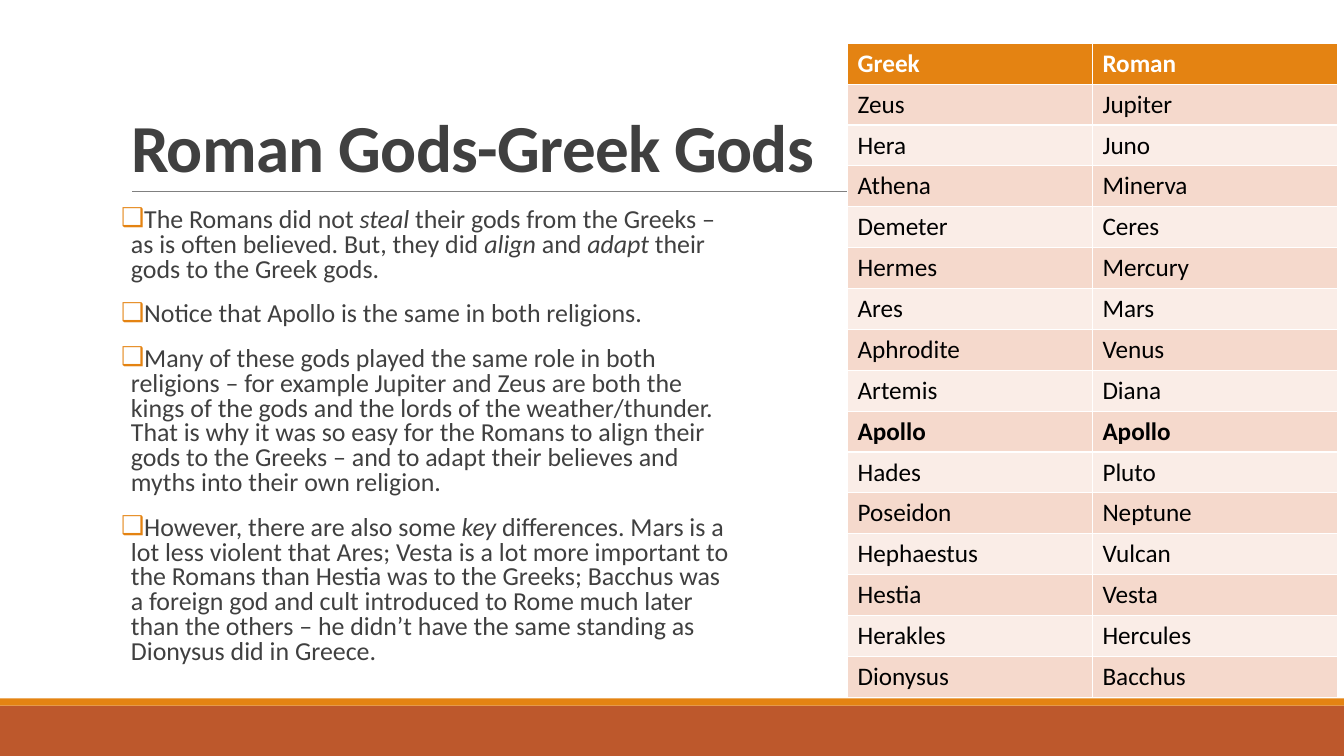
"""Build a slide that compares the Greek and the Roman gods."""
from lxml.etree import SubElement as Sub
from pptx import Presentation
from pptx.dml.color import RGBColor as RGB
from pptx.enum.shapes import MSO_CONNECTOR as Link, MSO_SHAPE as Shape
from pptx.enum.text import MSO_ANCHOR as Anchor, MSO_AUTO_SIZE as Fit, PP_ALIGN as Align
from pptx.oxml.ns import qn
from pptx.util import Cm, Pt

ORANGE, RUST, GREY = "E48312", "BD582C", "404040"


def paint(fill, color):
    fill.solid()
    fill.fore_color.rgb = RGB.from_string(color)


def style(font, size, color, bold=False):
    font.name, font.size, font.bold = "Calibri", Pt(size), bold
    font.color.rgb = RGB.from_string(color)


deck = Presentation()
deck.slide_width, deck.slide_height = Cm(33.87), Cm(19.05)
slide = deck.slides.add_slide(deck.slide_layouts[1])
shapes = slide.shapes
title, body = slide.placeholders

for top, high, color in [(17.78, 1.27, RUST), (17.6, 0.18, ORANGE)]:
    bar = shapes.add_shape(Shape.RECTANGLE, 0, Cm(top), deck.slide_width, Cm(high))
    bar.shadow.inherit = False
    paint(bar.fill, color)
    bar.line.fill.background()

rule = shapes.add_connector(Link.STRAIGHT, Cm(3.33), Cm(4.83), Cm(31.01), Cm(4.83))
rule.line.width = Pt(0.5)
paint(rule.line.fill, "808080")
Sub(rule._element.spPr, qn("a:effectLst"))

title.left, title.top, title.width, title.height = Cm(3.05), Cm(0.79), Cm(17.73), Cm(4.04)
frame = title.text_frame
frame.text = "Roman Gods-Greek Gods"
frame.auto_size, frame.vertical_anchor = Fit.NONE, Anchor.BOTTOM
head = frame.paragraphs[0]
head.alignment, head.line_spacing = Align.LEFT, 0.85
style(head.font, 48, GREY, True)
head.runs[0]._r.get_or_add_rPr().set("spc", "-50")

points = [
    "The Romans did not *steal* their gods from the Greeks – as is often believed. "
    "But, they did *align* and *adapt* their gods to the Greek gods.",
    "Notice that Apollo is the same in both religions.",
    "Many of these gods played the same role in both religions – for example Jupiter "
    "and Zeus are both the kings of the gods and the lords of the weather/thunder. "
    "That is why it was so easy for the Romans to align their gods to the Greeks – "
    "and to adapt their believes and myths into their own religion.",
    "However, there are also some *key *differences. Mars is a lot less violent that "
    "Ares; Vesta is a lot more important to the Romans than Hestia was to the Greeks; "
    "Bacchus was a foreign god and cult introduced to Rome much later than the others "
    "– he didn’t have the same standing as Dionysus did in Greece.",
]
body.left, body.top, body.width, body.height = Cm(3.05), Cm(5.13), Cm(15.37), Cm(12.34)
frame = body.text_frame
frame.auto_size, frame.vertical_anchor = Fit.NONE, Anchor.TOP
frame.margin_left = frame.margin_right = 0
for num, point in enumerate(points):
    para = frame.add_paragraph() if num else frame.paragraphs[0]
    para.line_spacing = 0.8
    para.space_before, para.space_after = Pt(12 if num else 0), Pt(2)
    prop = para._p.get_or_add_pPr()
    prop.set("marL", str(Cm(0.25)))
    prop.set("indent", str(Cm(-0.25)))
    Sub(Sub(prop, qn("a:buClr")), qn("a:srgbClr"), val=ORANGE)
    Sub(prop, qn("a:buFont"), typeface="Calibri")
    Sub(prop, qn("a:buChar"), char="❑")
    style(para.font, 18.5, GREY)
    for part, words in enumerate(point.split("*")):
        run = para.add_run()
        run.text = words
        if part % 2:
            run.font.italic = True

gods = [
    ("Greek", "Roman"), ("Zeus", "Jupiter"), ("Hera", "Juno"), ("Athena", "Minerva"),
    ("Demeter", "Ceres"), ("Hermes", "Mercury"), ("Ares", "Mars"),
    ("Aphrodite", "Venus"), ("Artemis", "Diana"), ("Apollo", "Apollo"),
    ("Hades", "Pluto"), ("Poseidon", "Neptune"), ("Hephaestus", "Vulcan"),
    ("Hestia", "Vesta"), ("Herakles", "Hercules"), ("Dionysus", "Bacchus"),
]
table = shapes.add_table(len(gods), 2, Cm(21.36), Cm(1.09), Cm(12.34), Cm(16.48)).table
for row, pair in enumerate(gods):
    for col, name in enumerate(pair):
        cell = table.cell(row, col)
        cell.text = name
        band = "F5D9CC" if row % 2 else "FAEDE7"
        paint(cell.fill, band if row else ORANGE)
        bold = row == 0 or name == "Apollo"
        style(cell.text_frame.paragraphs[0].font, 18, "000000" if row else "FFFFFF", bold)

deck.save("out.pptx")
